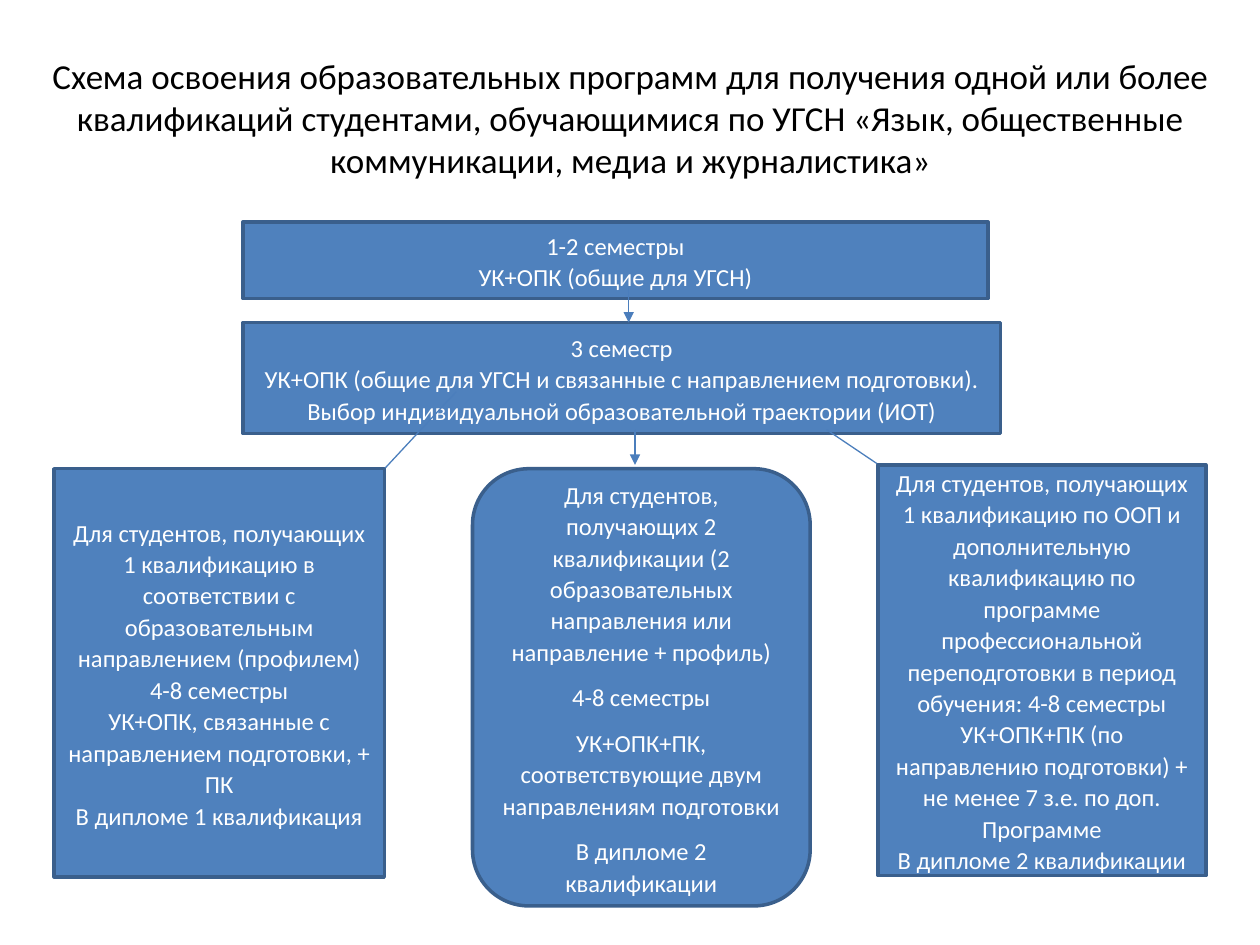
from lxml import etree
from pptx import Presentation, util as u
from pptx.dml.color import RGBColor
from pptx.enum import shapes, text
from pptx.oxml import ns

COLORS = {"box": "4F81BD", "border": "3A5F8C", "arrow": "4B7EBC", "light": "FFFFFF", "dark": "000000"}
COLUMNS, ROWS = 100, 75
PROCESS = shapes.MSO_SHAPE.FLOWCHART_PROCESS
ROUNDED = shapes.MSO_SHAPE.FLOWCHART_ALTERNATE_PROCESS


class Scheme:
    font = "Calibri"

    def __init__(self, presentation):
        self.presentation = presentation
        self.slide = presentation.slides.add_slide(presentation.slide_layouts[5])

    def x(self, columns):
        return round(self.presentation.slide_width * columns / COLUMNS)

    def y(self, rows):
        return round(self.presentation.slide_height * rows / ROWS)

    def color(self, name):
        return RGBColor.from_string(COLORS[name])

    def add_lines(self, shape, lines, size, color, spacing=None, after=0):
        frame = shape.text_frame
        frame.word_wrap = True
        frame.vertical_anchor = text.MSO_ANCHOR.MIDDLE
        for index, line in enumerate(lines):
            paragraph = frame.add_paragraph() if index else frame.paragraphs[0]
            paragraph.alignment = text.PP_ALIGN.CENTER
            paragraph.line_spacing = spacing
            paragraph.space_after = u.Pt(after)
            run = paragraph.add_run()
            run.text = line
            run.font.name = self.font
            run.font.size = u.Pt(size)
            run.font.color.rgb = self.color(color)

    def title(self, left, top, width, height, line):
        shape = self.slide.shapes.title
        shape.left, shape.top = self.x(left), self.y(top)
        shape.width, shape.height = self.x(width), self.y(height)
        self.add_lines(shape, [line], 20, "dark")

    def box(self, left, top, width, height, lines, kind=PROCESS, after=0):
        shape = self.slide.shapes.add_shape(
            kind, self.x(left), self.y(top), self.x(width), self.y(height))
        shape.shadow.inherit = False
        shape.fill.solid()
        shape.fill.fore_color.rgb = self.color("box")
        shape.line.color.rgb = self.color("border")
        shape.line.width = u.Pt(2)
        self.add_lines(shape, lines, 14, "light", 1.07, after)

    def connector(self, start, end, arrow=True):
        connector = self.slide.shapes.add_connector(
            shapes.MSO_CONNECTOR.STRAIGHT,
            self.x(start[0]), self.y(start[1]), self.x(end[0]), self.y(end[1]))
        connector.line.color.rgb = self.color("arrow")
        connector.line.width = u.Pt(0.75)
        properties = connector._element.spPr
        if arrow:
            etree.SubElement(properties.find(ns.qn("a:ln")), ns.qn("a:tailEnd"), type="triangle")
        etree.SubElement(properties, ns.qn("a:effectLst"))


def main():
    presentation = Presentation()
    presentation.slide_width, presentation.slide_height = u.Inches(10), u.Inches(7.5)
    scheme = Scheme(presentation)

    scheme.title(2, 1.6, 96.1, 15.5,
                 "Схема освоения образовательных программ для получения одной или более "
                 "квалификаций студентами, обучающимися по УГСН «Язык, общественные "
                 "коммуникации, медиа и журналистика»")

    scheme.box(19.3, 17.6, 59.1, 6.1, ["1-2 семестры", "УК+ОПК (общие для УГСН)"])
    scheme.box(19.3, 25.6, 60.1, 8.8, [
        "3 семестр",
        "УК+ОПК (общие для УГСН и связанные с направлением подготовки). "
        "Выбор индивидуальной образовательной траектории (ИОТ)"])

    scheme.connector((36.2, 31.1), (29.5, 38.3))
    scheme.box(4.3, 37.2, 26.2, 32.4, [
        "Для студентов, получающих 1 квалификацию в соответствии с "
        "образовательным направлением (профилем)",
        "4-8 семестры",
        "УК+ОПК, связанные с направлением подготовки, + ПК",
        "В дипломе 1 квалификация"])
    scheme.box(37.5, 37.2, 26.8, 34.7, [
        "Для студентов, получающих 2 квалификации (2 образовательных "
        "направления или направление + профиль)",
        "4-8 семестры",
        "УК+ОПК+ПК, соответствующие двум направлениям подготовки",
        "В дипломе 2 квалификации"], ROUNDED, after=8)
    scheme.connector((65.6, 34.1), (70.2, 37.2), arrow=False)
    scheme.box(69.7, 36.9, 26, 32.6, [
        "Для студентов, получающих",
        "1 квалификацию по ООП и дополнительную квалификацию по программе "
        "профессиональной переподготовки в период обучения: 4-8 семестры",
        "УК+ОПК+ПК (по направлению подготовки) + не менее 7 з.е. по доп. Программе",
        "В дипломе 2 квалификации"])

    scheme.connector((50.4, 34.1), (50.4, 36.9))
    scheme.connector((49.9, 22.8), (49.9, 25.6))
    presentation.save("out.pptx")


if __name__ == "__main__":
    main()
